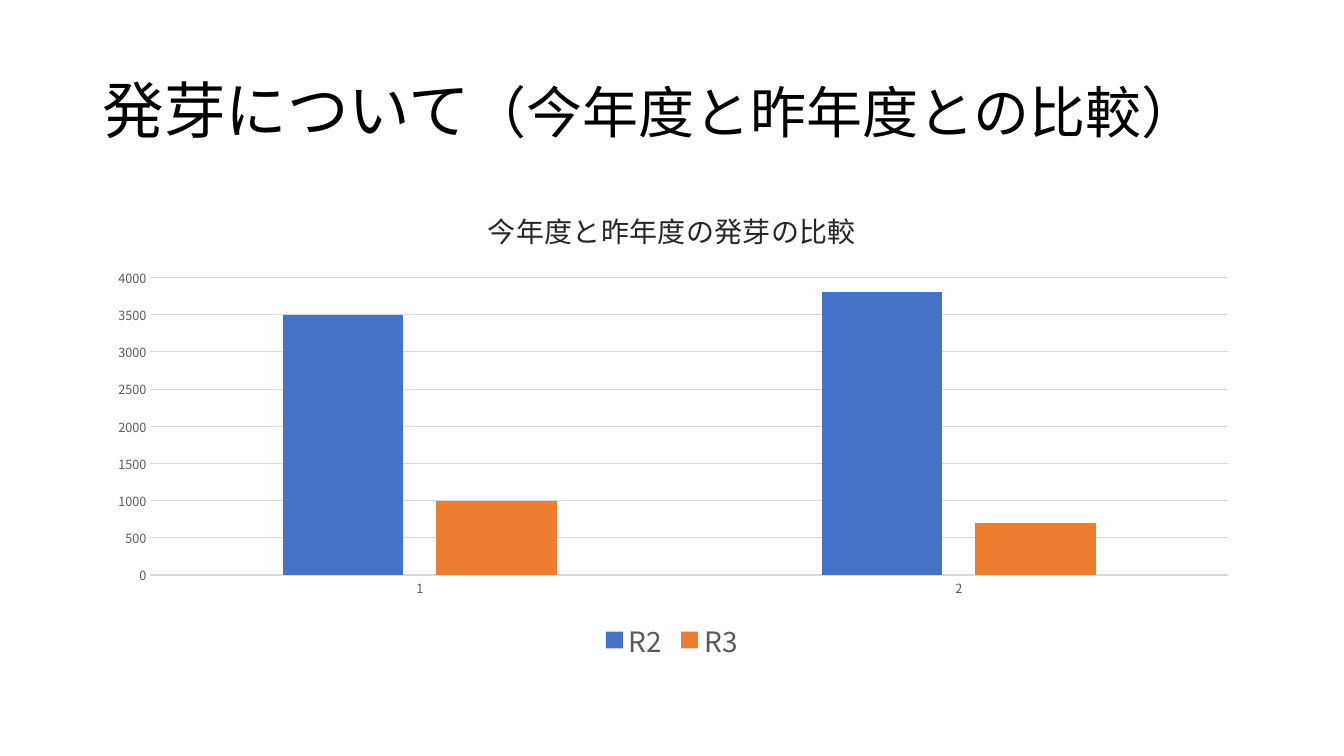
"""Build the slide comparing this year's germination with last year's."""
from dataclasses import dataclass

from lxml import etree
from pptx import Presentation
from pptx.chart.data import CategoryChartData
from pptx.dml.color import RGBColor
from pptx.enum.chart import XL_CHART_TYPE, XL_LEGEND_POSITION, XL_TICK_MARK
from pptx.enum.text import MSO_ANCHOR, PP_ALIGN
from pptx.oxml.ns import qn
from pptx.util import Pt

COLUMNS = XL_CHART_TYPE.COLUMN_CLUSTERED
BOTTOM = XL_LEGEND_POSITION.BOTTOM
NO_TICK = XL_TICK_MARK.NONE
MIDDLE = MSO_ANCHOR.MIDDLE
LEFT = PP_ALIGN.LEFT

LATIN = "Arial"
JAPANESE = "Noto Sans CJK JP"
GRID = "D9D9D9"
GREY = "595959"


@dataclass(frozen=True)
class TitleRun:
    text: str
    size: float


@dataclass(frozen=True)
class YearSeries:
    name: str
    values: tuple[int, ...]
    color: str


TITLE = (TitleRun("発芽について", 44), TitleRun("（今年度と昨年度との比較）", 40))
YEARS = (
    YearSeries("R2", (3500, 3800), "4472C4"),
    YearSeries("R3", (1000, 700), "ED7D31"),
)


def rgb(color: str) -> RGBColor:
    return RGBColor.from_string(color)


def set_font(font, size: float, color: str, name: str = JAPANESE) -> None:
    font.size = Pt(size)
    font.name = name
    font.color.rgb = rgb(color)
    font.bold = False


def set_line(line, color: str) -> None:
    line.color.rgb = rgb(color)
    line.width = Pt(0.75)


def add_title(s) -> None:
    sp = s.shapes.title
    sp.left, sp.top, sp.width, sp.height = Pt(66), Pt(28.75), Pt(828), Pt(104.4)
    tf = sp.text_frame
    tf.word_wrap = True
    tf.vertical_anchor = MIDDLE
    p = tf.paragraphs[0]
    p.alignment = LEFT
    p.line_spacing = 0.9
    for part in TITLE:
        r = p.add_run()
        r.text = part.text
        set_font(r.font, part.size, "000000", LATIN)
        etree.SubElement(r.font._element, qn("a:ea"), typeface=JAPANESE)


def place_plot(chart, x: float, y: float, w: float, h: float) -> None:
    plot_area = chart._chartSpace.chart.plotArea
    for old in plot_area.findall(qn("c:layout")):
        plot_area.remove(old)
    layout = etree.Element(qn("c:layout"))
    plot_area.insert(0, layout)
    manual = etree.SubElement(layout, qn("c:manualLayout"))
    settings = {"layoutTarget": "inner", "xMode": "edge", "yMode": "edge",
                "x": x, "y": y, "w": w, "h": h}
    for tag, value in settings.items():
        etree.SubElement(manual, qn(f"c:{tag}"), val=str(value))


def add_germination_chart(s) -> None:
    data = CategoryChartData()
    data.categories = ["1", "2"]
    for year in YEARS:
        data.add_series(year.name, year.values)
    frame = s.shapes.add_chart(COLUMNS, Pt(66), Pt(133.2), Pt(828), Pt(342.7), data)
    chart = frame.chart
    set_font(chart.font, 10, "000000")

    chart.has_title = True
    p = chart.chart_title.text_frame.paragraphs[0]
    r = p.add_run()
    r.text = "今年度と昨年度の発芽の比較"
    set_font(r.font, 20, "262626")
    chart.chart_title.include_in_layout = False

    chart.has_legend = True
    chart.legend.position = BOTTOM
    chart.legend.include_in_layout = False
    set_font(chart.legend.font, 20, GREY)

    for axis in (chart.category_axis, chart.value_axis):
        axis.major_tick_mark = axis.minor_tick_mark = NO_TICK
        set_font(axis.tick_labels.font, 9, GREY)
    set_line(chart.category_axis.format.line, GRID)
    axis = chart.value_axis
    axis.minimum_scale, axis.maximum_scale, axis.major_unit = 0, 4000, 500
    axis.format.line.fill.background()
    axis.has_major_gridlines = True
    set_line(axis.major_gridlines.format.line, GRID)

    plot = chart.plots[0]
    plot.gap_width, plot.overlap = 219, -27
    plot.vary_by_categories = False
    for series, year in zip(plot.series, YEARS):
        series.format.fill.solid()
        series.format.fill.fore_color.rgb = rgb(year.color)
    place_plot(chart, 0.05, 0.19, 0.93, 0.62)


def main() -> None:
    prs = Presentation()
    prs.slide_width, prs.slide_height = Pt(960), Pt(540)
    s = prs.slides.add_slide(prs.slide_layouts[5])
    add_title(s)
    add_germination_chart(s)
    prs.save("out.pptx")


if __name__ == "__main__":
    main()
